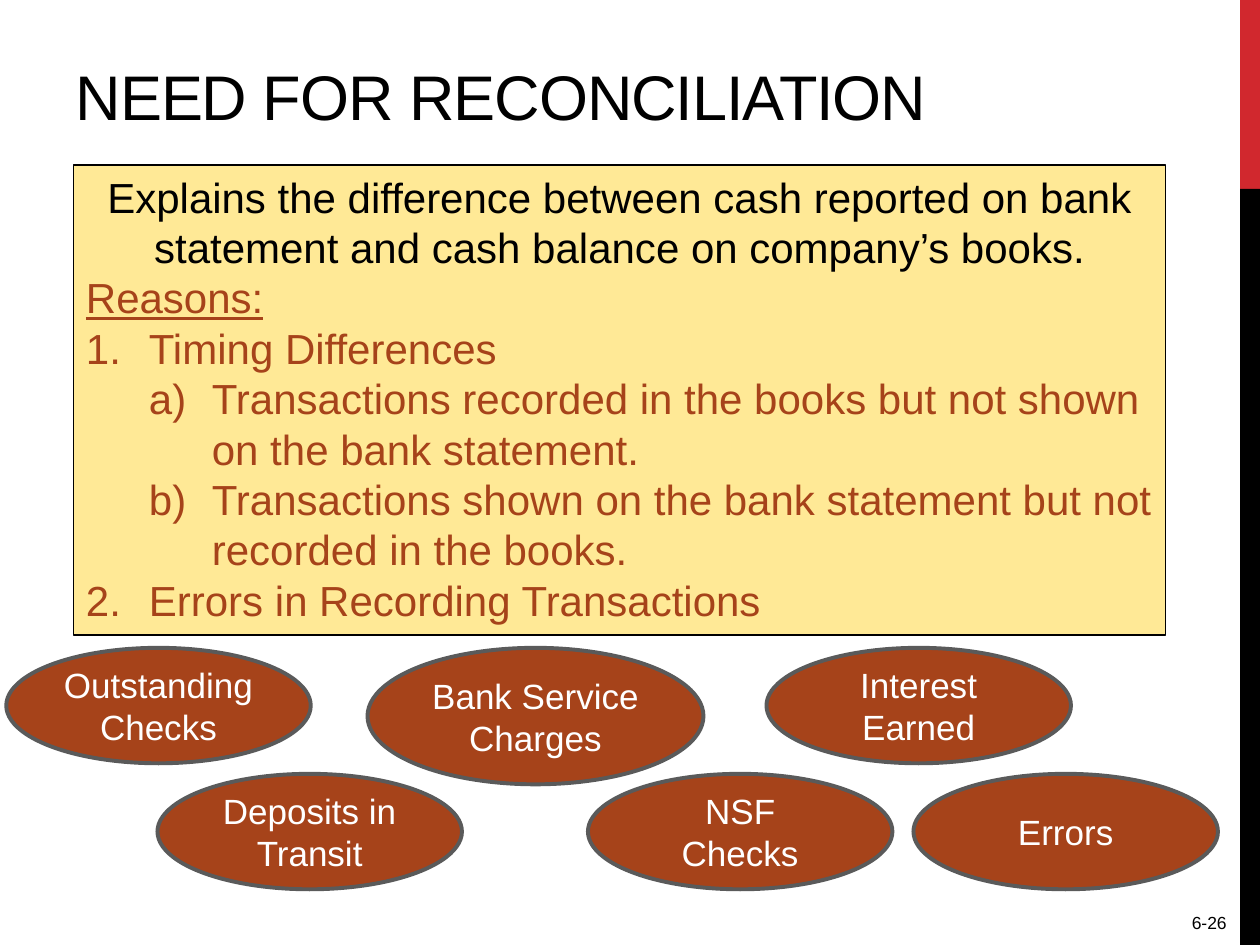
import dataclasses
import typing

import lxml.etree
import pptx
import pptx.dml.color
import pptx.enum.shapes
import pptx.enum.text
import pptx.oxml.ns
import pptx.util

RGB = pptx.dml.color.RGBColor
SHAPE = pptx.enum.shapes.MSO_SHAPE
ALIGN = pptx.enum.text.PP_ALIGN
ANCHOR = pptx.enum.text.MSO_ANCHOR
FIT = pptx.enum.text.MSO_AUTO_SIZE

BLACK = RGB(0x00, 0x00, 0x00)
WHITE = RGB(0xFF, 0xFF, 0xFF)
RED = RGB(0xD1, 0x28, 0x2E)
CREAM = RGB(0xFF, 0xE9, 0x96)
RUST = RGB(0xA6, 0x43, 0x1A)
GRAY = RGB(0x5A, 0x5A, 0x5A)

PX = 7620
UPPER_ROW, LOWER_ROW = 617, 737
INDENT = 60


@dataclasses.dataclass
class Line:
    text: str
    size: int = 24
    color: RGB = BLACK
    align: ALIGN = ALIGN.LEFT
    underline: bool = False
    level: int = 0
    numbering: str = ""


@dataclasses.dataclass
class Cause:
    text: str
    left: int
    top: int
    width: int = 290
    height: int = 110


BARS = [(0, 180, RED), (180, 720, BLACK)]

REASONS = [
    Line("Explains the difference between cash reported on bank statement "
         "and cash balance on company’s books.", align=ALIGN.CENTER),
    Line("Reasons:", color=RUST, underline=True),
    Line("Timing Differences", color=RUST, numbering="arabicPeriod"),
    Line("Transactions recorded in the books but not shown on the bank statement.",
         color=RUST, level=1, numbering="alphaLcParenR"),
    Line("Transactions shown on the bank statement but not recorded in the books.",
         color=RUST, level=1, numbering="alphaLcParenR"),
    Line("Errors in Recording Transactions", color=RUST, numbering="arabicPeriod"),
]

CAUSES = [
    Cause("Outstanding Checks", 6, UPPER_ROW),
    Cause("Deposits in Transit", 150, LOWER_ROW),
    Cause("Bank Service Charges", 350, UPPER_ROW, 320, 130),
    Cause("NSF Checks", 560, LOWER_ROW),
    Cause("Interest Earned", 730, UPPER_ROW),
    Cause("Errors", 870, LOWER_ROW),
]


def px(*lengths: int) -> list[pptx.util.Emu]:
    return [pptx.util.Emu(n * PX) for n in lengths]


def apply(target: typing.Any, values: dict[str, typing.Any]) -> None:
    for name, value in values.items():
        setattr(target, name, value)


def number(p: typing.Any, line: Line) -> None:
    pPr = p._p.get_or_add_pPr()
    pPr.set("marL", str(INDENT * (line.level + 1) * PX))
    pPr.set("indent", str(-INDENT * PX))
    bullet = lxml.etree.SubElement(pPr, pptx.oxml.ns.qn("a:buAutoNum"))
    bullet.set("type", line.numbering)


def write(tf: typing.Any, lines: list[Line], **frame: typing.Any) -> None:
    apply(tf, {"word_wrap": True, **frame})
    for i, line in enumerate(lines):
        p = tf.add_paragraph() if i else tf.paragraphs[0]
        apply(p, {"alignment": line.align, "level": line.level})
        if line.numbering:
            number(p, line)
        r = p.add_run()
        r.text = line.text
        apply(r.font, {"name": "Arial", "size": pptx.util.Pt(line.size),
                       "underline": line.underline})
        r.font.color.rgb = line.color


def add_shape(s: typing.Any, kind: SHAPE, box: tuple[int, ...], fill: RGB,
              outline: RGB | None = None, weight: float = 0) -> typing.Any:
    sp = s.shapes.add_shape(kind, *px(*box))
    sp.shadow.inherit = False
    sp.fill.solid()
    sp.fill.fore_color.rgb = fill
    if outline is None:
        sp.line.fill.background()
    else:
        sp.line.color.rgb = outline
        sp.line.width = pptx.util.Pt(weight)
    return sp


def add_title(s: typing.Any, text: str) -> None:
    sp = s.shapes.title
    apply(sp, dict(zip(("left", "top", "width", "height"), px(60, 36, 1100, 97))))
    write(sp.text_frame, [Line(text, 36)],
          vertical_anchor=ANCHOR.BOTTOM, auto_size=FIT.NONE)
    r = sp.text_frame.paragraphs[0].runs[0]
    r.font._element.set("spc", "-60")


def add_cause(s: typing.Any, cause: Cause) -> None:
    box = (cause.left, cause.top, cause.width, cause.height)
    sp = add_shape(s, SHAPE.OVAL, box, RUST, GRAY, 2.25)
    write(sp.text_frame, [Line(cause.text, 20, WHITE, ALIGN.CENTER)],
          vertical_anchor=ANCHOR.MIDDLE)


def main() -> None:
    prs = pptx.Presentation()
    prs.slide_width, prs.slide_height = px(1200, 900)
    s = prs.slides.add_slide(prs.slide_layouts[5])

    for top, height, color in BARS:
        add_shape(s, SHAPE.RECTANGLE, (1181, top, 19, height), color)
    add_title(s, "NEED FOR RECONCILIATION")

    sp = add_shape(s, SHAPE.RECTANGLE, (70, 157, 1040, 448), CREAM, BLACK, 1)
    write(sp.text_frame, REASONS, vertical_anchor=ANCHOR.TOP,
          auto_size=FIT.SHAPE_TO_FIT_TEXT)

    sp = s.shapes.add_textbox(*px(960, 863, 220, 37))
    write(sp.text_frame, [Line("6-26", 10, align=ALIGN.RIGHT)])

    for cause in CAUSES:
        add_cause(s, cause)

    prs.save("out.pptx")


if __name__ == "__main__":
    main()
